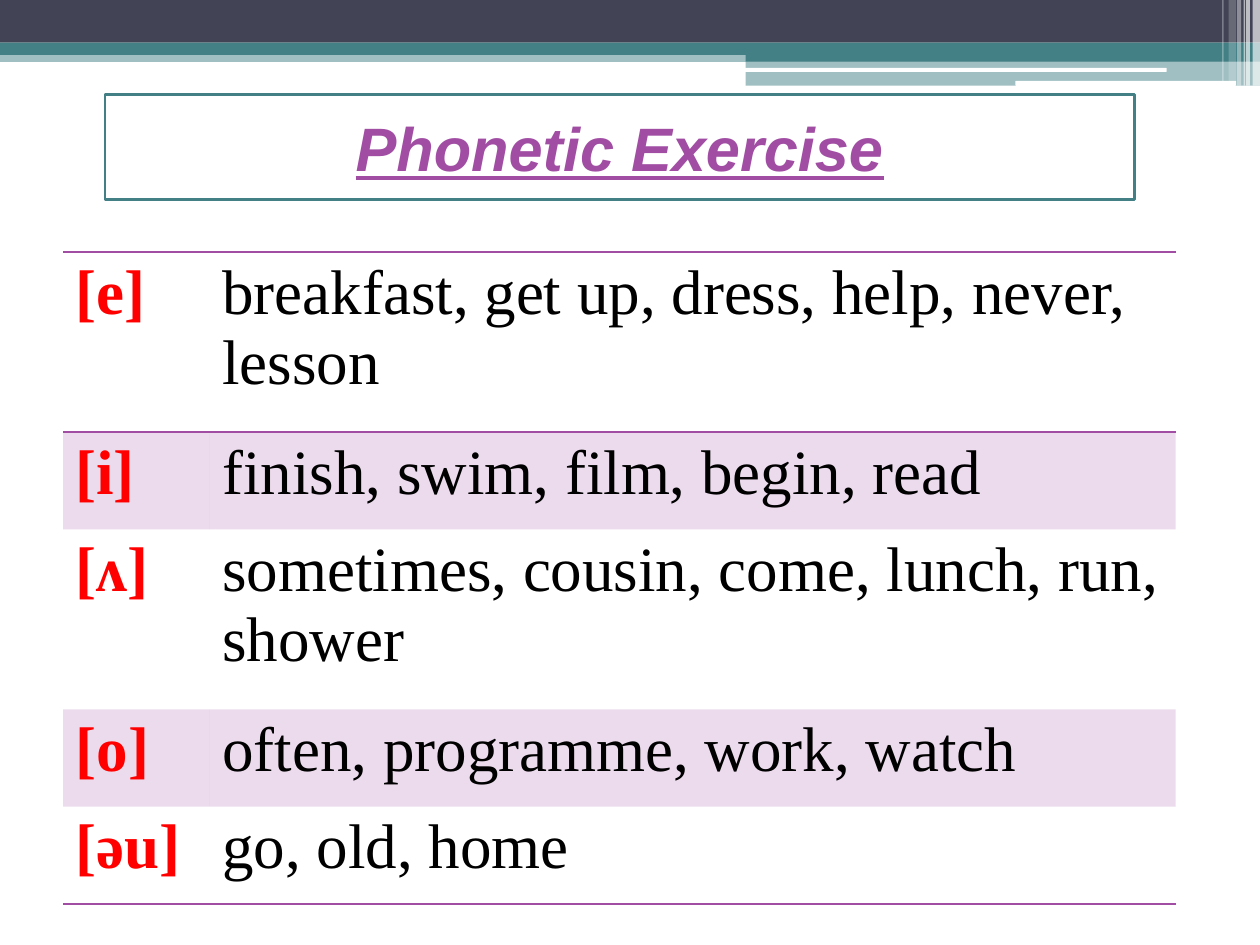
from dataclasses import dataclass
from typing import Optional

from lxml import etree
from pptx import Presentation
from pptx import util as u
from pptx.dml.color import RGBColor
from pptx.enum import shapes, text
from pptx.oxml import ns


@dataclass(frozen=True)
class Theme:
    """Colours, fonts and type sizes of the slide."""
    dark: str = "424456"
    teal: str = "438086"
    white: str = "FFFFFF"
    purple: str = "A04DA3"
    red: str = "FF0000"
    black: str = "000000"
    title_font: str = "Arial"
    body_font: str = "Times New Roman"
    title_size: int = 35
    body_size: int = 36
    band_opacity: int = 20
    no_grid_style: str = "{2D5ABB26-0587-4C30-8999-92F81FD0307C}"


@dataclass(frozen=True)
class Bar:
    """One decorative bar in centimetres, with its opacity in percent."""
    left: float
    top: float
    width: float
    height: float
    colour: str
    opacity: int = 100
    rounded: bool = False


@dataclass(frozen=True)
class Sound:
    """One table row: a sound, its words and the row height in centimetres."""
    symbol: str
    words: str
    height: float


THEME = Theme()
SLIDE_WIDTH, SLIDE_HEIGHT = 25.4, 19.05
STEP_LEFT, STEP_WIDTH = 15.03, 10.37
TALL, SHORT = 3.63, 1.96

BARS = [
    Bar(0, 1.02, SLIDE_WIDTH, 0.23, THEME.teal, 50),
    Bar(0, 0, SLIDE_WIDTH, 0.86, THEME.dark),
    Bar(0, 0.86, SLIDE_WIDTH, 0.25, THEME.teal),
    Bar(STEP_LEFT, 0.99, STEP_WIDTH, 0.25, THEME.teal),
    Bar(STEP_LEFT, 1.23, STEP_WIDTH, 0.5, THEME.teal, 50),
    Bar(15.01, 1.37, 8.51, 0.08, THEME.white, rounded=True),
    Bar(20.47, 1.63, 4.45, 0.1, THEME.white, rounded=True),
    Bar(25.25, 0, 0.15, 1.73, THEME.white, 65),
    Bar(25.12, 0, 0.08, 1.73, THEME.white, 65),
    Bar(25.07, 0, 0.03, 1.73, THEME.white, 60),
    Bar(24.94, 0, 0.08, 1.73, THEME.white, 40),
    Bar(24.77, 0, 0.15, 1.63, THEME.white, 20),
    Bar(24.64, 0, 0.03, 1.63, THEME.white, 30),
]

SOUNDS = [
    Sound("[e]", "breakfast, get up, dress, help, never, lesson", TALL),
    Sound("[i]", "finish, swim, film, begin, read", SHORT),
    Sound("[ᴧ]", "sometimes, cousin, come, lunch, run, shower", TALL),
    Sound("[o]", "often, programme, work, watch", SHORT),
    Sound("[әu]", "go, old, home", SHORT),
]


def paint(fill, colour: str, opacity: int = 100) -> None:
    """Give a fill a solid colour with the wanted opacity."""
    fill.solid()
    fill.fore_color.rgb = RGBColor.from_string(colour)
    if opacity < 100:
        tint = fill._xPr.find(ns.qn("a:solidFill"))[0]
        etree.SubElement(tint, ns.qn("a:alpha"), val=str(opacity * 1000))


def style_span(span, font: str, size: int, colour: str, bold: bool) -> None:
    """Format one run of text."""
    span.font.name = font
    span.font.size = u.Pt(size)
    span.font.bold = bold
    span.font.color.rgb = RGBColor.from_string(colour)


def draw_bar(page, bar: Bar) -> None:
    """Draw one decorative bar."""
    kinds = shapes.MSO_SHAPE
    kind = kinds.ROUNDED_RECTANGLE if bar.rounded else kinds.RECTANGLE
    box = page.shapes.add_shape(
        kind, u.Cm(bar.left), u.Cm(bar.top), u.Cm(bar.width), u.Cm(bar.height))
    box.shadow.inherit = False
    box.line.fill.background()
    paint(box.fill, bar.colour, bar.opacity)


def draw_title(page, title: str) -> None:
    """Draw the framed title."""
    box = page.shapes.add_shape(
        shapes.MSO_SHAPE.RECTANGLE, u.Cm(2.12), u.Cm(1.9), u.Cm(20.75), u.Cm(2.12))
    box.shadow.inherit = False
    paint(box.fill, THEME.white)
    paint(box.line.fill, THEME.teal)
    box.line.width = u.Pt(1.5)
    frame = box.text_frame
    frame.text = title
    frame.word_wrap = True
    frame.vertical_anchor = text.MSO_ANCHOR.MIDDLE
    para = frame.paragraphs[0]
    para.alignment = text.PP_ALIGN.CENTER
    span = para.runs[0]
    style_span(span, THEME.title_font, THEME.title_size, THEME.purple, True)
    span.font.italic = True
    span.font.underline = True


def rule_cell(cell, side: str, colour: Optional[str]) -> None:
    """Set one border of a cell, or clear it when there is no colour."""
    line = etree.SubElement(cell._tc.get_or_add_tcPr(), ns.qn(f"a:ln{side}"), w=str(u.Pt(1)))
    if colour is None:
        etree.SubElement(line, ns.qn("a:noFill"))
    else:
        solid = etree.SubElement(line, ns.qn("a:solidFill"))
        etree.SubElement(solid, ns.qn("a:srgbClr"), val=colour)


def fill_cell(cell, words: str, colour: str, bold: bool, row: int) -> None:
    """Write a cell and give it the borders and band of its row."""
    cell.text_frame.text = words
    span = cell.text_frame.paragraphs[0].runs[0]
    style_span(span, THEME.body_font, THEME.body_size, colour, bold)
    last = len(SOUNDS) - 1
    ruled = {"T": row in (0, 1), "B": row in (0, last)}
    for side in "LRTB":
        rule_cell(cell, side, THEME.purple if ruled.get(side) else None)
    if row % 2:
        paint(cell.fill, THEME.purple, THEME.band_opacity)
    else:
        cell.fill.background()


def draw_table(page) -> None:
    """Draw the table of sounds and words."""
    widths = (2.96, 19.47)
    height = sum(sound.height for sound in SOUNDS)
    table = page.shapes.add_table(
        len(SOUNDS), len(widths), u.Cm(1.27), u.Cm(5.08),
        u.Cm(sum(widths)), u.Cm(height)).table
    table.first_row = False
    table.horz_banding = False
    table._tbl.tblPr.find(ns.qn("a:tableStyleId")).text = THEME.no_grid_style
    for column, width in zip(table.columns, widths):
        column.width = u.Cm(width)
    for row, sound in enumerate(SOUNDS):
        table.rows[row].height = u.Cm(sound.height)
        fill_cell(table.cell(row, 0), sound.symbol, THEME.red, True, row)
        fill_cell(table.cell(row, 1), sound.words, THEME.black, False, row)


def main() -> None:
    """Build the slide and save it."""
    deck = Presentation()
    deck.slide_width, deck.slide_height = u.Cm(SLIDE_WIDTH), u.Cm(SLIDE_HEIGHT)
    page = deck.slides.add_slide(deck.slide_layouts[6])
    paint(page.background.fill, THEME.white)
    for bar in BARS:
        draw_bar(page, bar)
    draw_title(page, "Phonetic Exercise")
    draw_table(page)
    deck.save("out.pptx")


if __name__ == "__main__":
    main()
